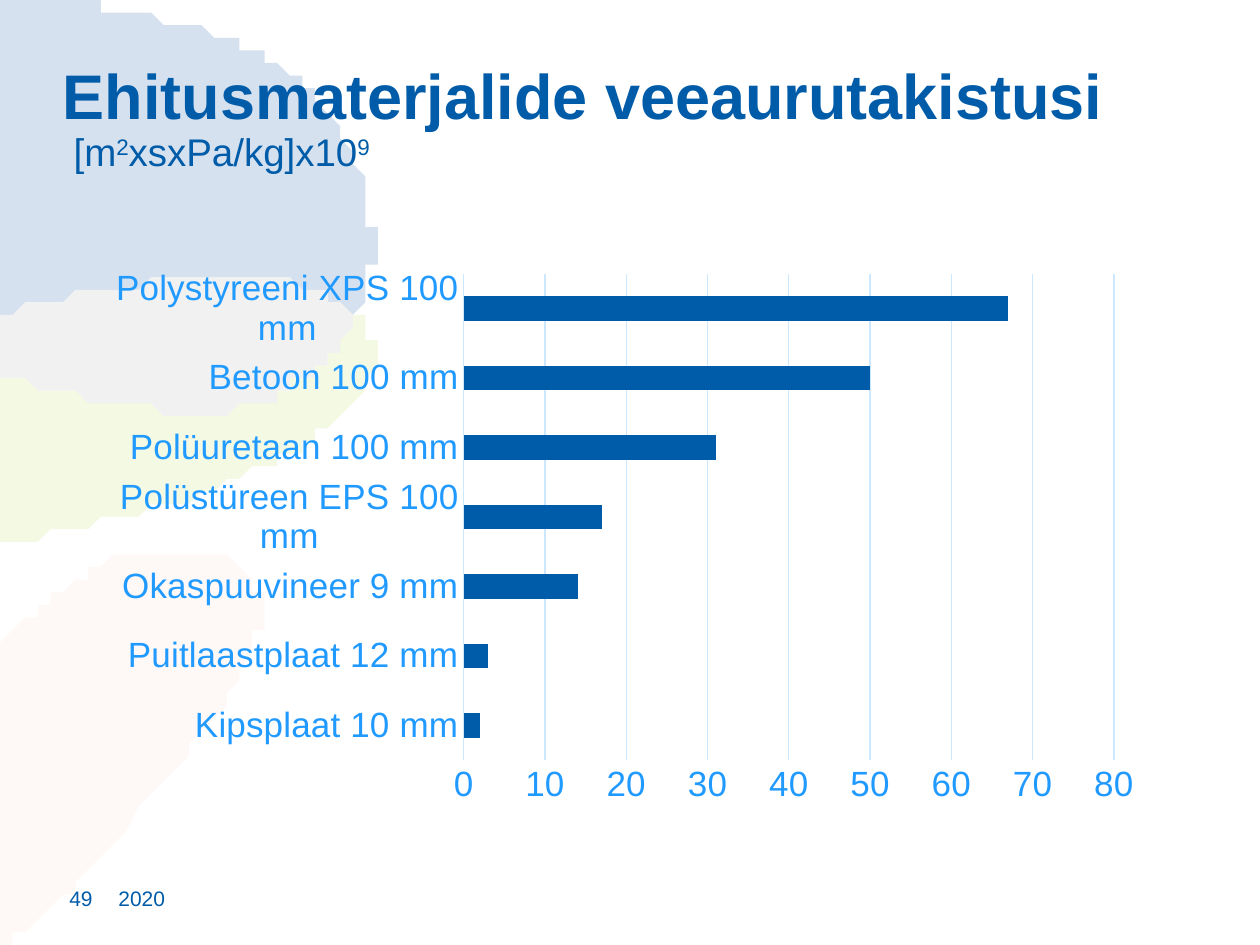
import dataclasses

import lxml.etree
import pptx
import pptx.chart.data
import pptx.dml.color
import pptx.enum.chart
import pptx.enum.text
import pptx.oxml.ns
import pptx.util

COLUMNS, ROWS = 100, 75


@dataclasses.dataclass(frozen=True)
class Theme:
    font: str = "Arial"
    navy: str = "005CA8"
    label: str = "219AFF"
    grid: str = "CCE8FF"
    sky: str = "D6E1F0"
    leaf: str = "F3F9E3"
    overlap: str = "F1F1F1"
    petal: str = "FEF9F7"
    title: int = 36
    unit: int = 22
    axis: int = 20
    footer: int = 12


def rgb(value):
    return pptx.dml.color.RGBColor.from_string(value)


def smooth(points, steps=6):
    padded = [points[0], *points, points[-1]]
    curve = []
    for a, b, c, d in zip(padded, padded[1:], padded[2:], padded[3:]):
        for t in (i / steps for i in range(steps)):
            curve.append(tuple(
                max(0, q + t / 2 * (r - p + t * (2 * p - 5 * q + 4 * r - s + t * (3 * (q - r) + s - p))))
                for p, q, r, s in zip(a, b, c, d)))
    return [(x, min(y, ROWS)) for x, y in curve + [points[-1]]]


class SlideBuilder:
    def __init__(self, prs, theme):
        self.theme = theme
        self.slide = prs.slides.add_slide(prs.slide_layouts[6])
        self.cell = prs.slide_width / COLUMNS

    def box(self, *cells):
        return [pptx.util.Emu(round(n * self.cell)) for n in cells]

    def style(self, font, size, color, bold=False):
        font.name = self.theme.font
        font.size = pptx.util.Pt(size)
        font.bold = bold
        font.color.rgb = rgb(color)

    def outline(self, points, color):
        builder = self.slide.shapes.build_freeform(*points[0], scale=self.cell)
        builder.add_line_segments(points[1:], close=True)
        sp = builder.convert_to_shape()
        sp.shadow.inherit = False
        sp.fill.solid()
        sp.fill.fore_color.rgb = rgb(color)
        sp.line.fill.background()

    def text(self, cells, text, size, bold=False, anchor="TOP"):
        tf = self.slide.shapes.add_textbox(*self.box(*cells)).text_frame
        tf.word_wrap = True
        tf.margin_left = tf.margin_right = tf.margin_top = tf.margin_bottom = 0
        tf.vertical_anchor = getattr(pptx.enum.text.MSO_ANCHOR, anchor)
        p = tf.paragraphs[0]
        p.add_run().text = text
        self.style(p.font, size, self.theme.navy, bold)
        return p

    def title(self, cells, text, unit):
        p = self.text(cells, text, self.theme.title, bold=True)
        p.line_spacing = 0.9
        p.add_line_break()
        for part, raised in unit:
            r = p.add_run()
            r.text = part
            r.font.size = pptx.util.Pt(self.theme.unit)
            r.font.bold = False
            if raised:
                r.font._element.set("baseline", "30000")

    def bar_chart(self, cells, values, layout):
        data = pptx.chart.data.CategoryChartData()
        data.categories = list(values)
        data.add_series("Series 1", list(values.values()))
        chart = self.slide.shapes.add_chart(
            pptx.enum.chart.XL_CHART_TYPE.BAR_CLUSTERED, *self.box(*cells), data).chart
        self.style(chart.font, 10, self.theme.navy)
        chart.has_legend = chart.has_title = False
        plot = chart.plots[0]
        plot.gap_width = 182
        plot.vary_by_categories = False
        fill = plot.series[0].format.fill
        fill.solid()
        fill.fore_color.rgb = rgb(self.theme.navy)
        for axis in (chart.category_axis, chart.value_axis):
            axis.major_tick_mark = axis.minor_tick_mark = pptx.enum.chart.XL_TICK_MARK.NONE
            self.style(axis.tick_labels.font, self.theme.axis, self.theme.label)
        chart.category_axis.has_major_gridlines = False
        axis = chart.value_axis
        axis.minimum_scale, axis.maximum_scale, axis.major_unit = 0, 80, 10
        axis.format.line.fill.background()
        for line in (chart.category_axis.format.line, axis.major_gridlines.format.line):
            line.color.rgb = rgb(self.theme.grid)
            line.width = pptx.util.Pt(0.75)
        self.place_plot(chart, layout)

    def place_plot(self, chart, layout):
        qn = pptx.oxml.ns.qn
        area = chart._chartSpace.find(".//" + qn("c:plotArea"))
        for old in area.findall(qn("c:layout")):
            area.remove(old)
        holder = lxml.etree.Element(qn("c:layout"))
        area.insert(0, holder)
        manual = lxml.etree.SubElement(holder, qn("c:manualLayout"))
        settings = {"layoutTarget": "inner", "xMode": "edge", "yMode": "edge", **layout}
        for name, value in settings.items():
            lxml.etree.SubElement(manual, qn("c:" + name)).set("val", str(value))


def draw_background(builder):
    theme = builder.theme
    crest = smooth([(0, 25), (4.7, 23.7), (9.4, 22.8), (14.1, 22.2), (17.8, 22),
                    (23, 22.5), (26, 23.5), (28.3, 25.1)])
    belly = smooth([(28.3, 25.1), (26.8, 27.5), (24, 30.1), (20.2, 32.1), (15.6, 32.8),
                    (10, 32.2), (5.3, 31.3), (0, 29.8)])
    sky = smooth([(28.3, 25.1), (29.3, 22.5), (29.6, 18.9), (29, 15.2), (27.7, 11.7),
                  (25.8, 8.6), (23.2, 6), (20.4, 4.1), (16.9, 2.6), (12.2, 1.4),
                  (7.5, 0.5), (3, 0), (0, 0)])
    leaf = smooth([(0, 43.2), (5.9, 41.9), (10.9, 40.7), (15.5, 39.4), (20.2, 37.4),
                   (24.2, 35.2), (27.2, 32.8), (29.1, 30.3), (29.7, 28.1), (29.3, 26.4),
                   (28.3, 25.1)])
    petal = smooth([(0, 75), (0.6, 75), (3.5, 72.5), (7.9, 68), (13.9, 60.9), (17.5, 56.2),
                    (19.6, 52.5), (20.6, 49.4), (20.6, 47.3), (19.6, 45.6), (17.7, 44.3),
                    (13.9, 43.5), (10.2, 44.1), (6.7, 45.6), (3.2, 48.1), (0, 51.2)])
    builder.outline(petal, theme.petal)
    builder.outline(leaf + belly, theme.leaf)
    builder.outline(crest + sky, theme.sky)
    builder.outline(crest + belly, theme.overlap)


def main():
    prs = pptx.Presentation()
    prs.slide_width, prs.slide_height = pptx.util.Inches(10), pptx.util.Inches(7.5)
    builder = SlideBuilder(prs, Theme())
    draw_background(builder)
    for left, width, text in ((9.4, 7, "2020"), (5.5, 3.9, "49")):
        builder.text((left, 70.7, width, 1.6), text, builder.theme.footer, anchor="BOTTOM")
    resistances = {
        "Kipsplaat 10 mm": 2,
        "Puitlaastplaat 12 mm": 3,
        "Okaspuuvineer 9 mm": 14,
        "Polüstüreen EPS 100 mm": 17,
        "Polüuretaan 100 mm": 31,
        "Betoon 100 mm": 50,
        "Polystyreeni XPS 100 mm": 67,
    }
    builder.bar_chart((7.2, 20.4, 84.6, 44.4), resistances,
                      {"x": 0.35, "y": 0.03, "w": 0.61, "h": 0.87})
    builder.title((5, 5.2, 90, 10), "Ehitusmaterjalide veeaurutakistusi",
                  ((" [m", False), ("2", True), ("xsxPa/kg]x10", False), ("9", True)))
    prs.save("out.pptx")


if __name__ == "__main__":
    main()
